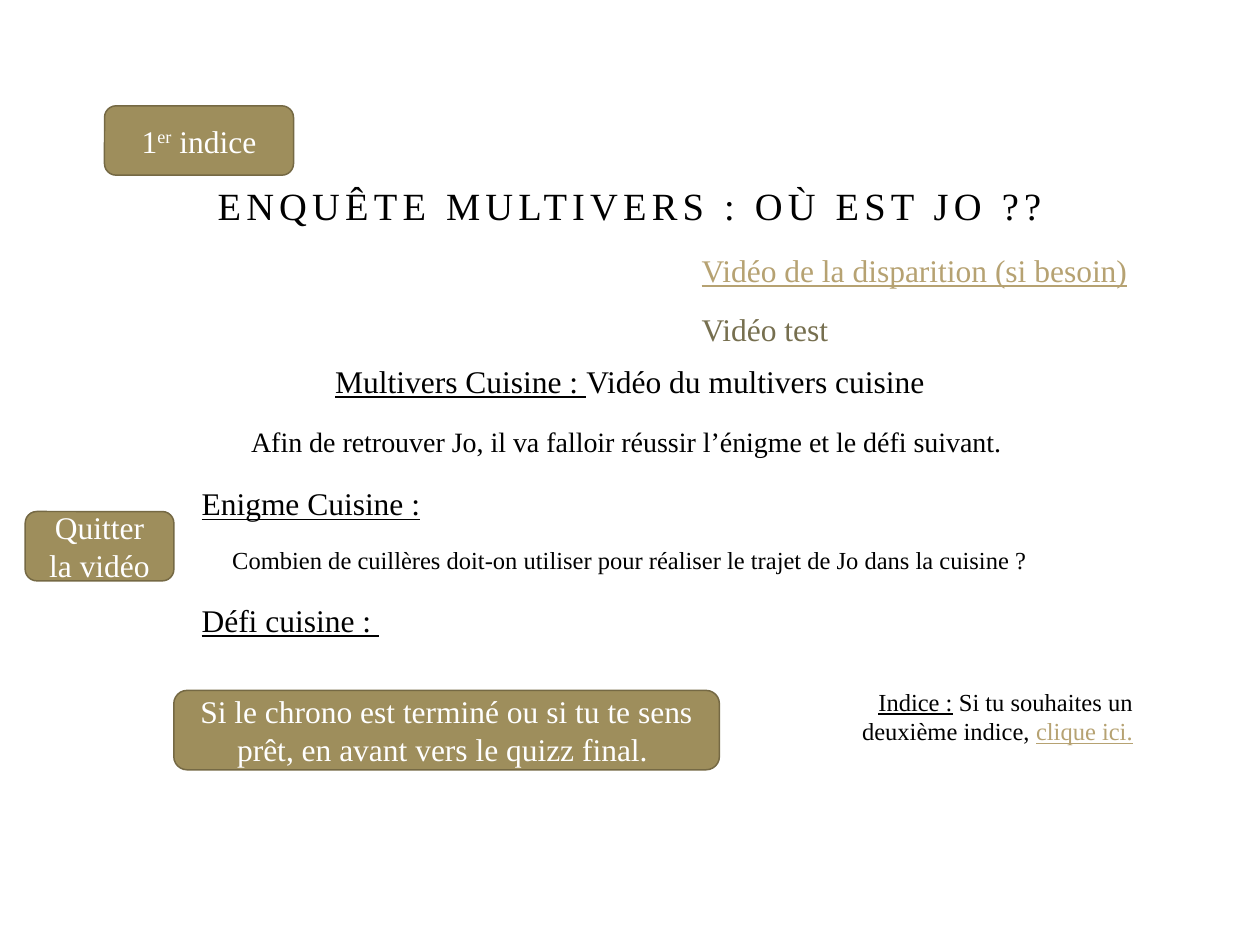
from pptx import Presentation
from pptx.dml.color import RGBColor
from pptx.enum.shapes import MSO_SHAPE
from pptx.enum.text import MSO_ANCHOR, MSO_AUTO_SIZE, PP_ALIGN
from pptx.oxml.xmlchemy import OxmlElement
from pptx.util import Inches, Pt

FONT = "Times New Roman"
BLACK = RGBColor(0x00, 0x00, 0x00)
WHITE = RGBColor(0xFF, 0xFF, 0xFF)
GOLD = RGBColor(0x9E, 0x8E, 0x5C)
GOLD_EDGE = RGBColor(0x75, 0x69, 0x44)
LINK = RGBColor(0xB6, 0xA2, 0x72)
VISITED_LINK = RGBColor(0x76, 0x6F, 0x4F)


def add_text(paragraph, text, size=18, color=BLACK, underline=False,
             spacing=None, baseline=None):
    """Append a run; spacing is in points, baseline in percent."""
    run = paragraph.add_run()
    run.text = text
    run.font.name = FONT
    run.font.size = Pt(size)
    run.font.bold = False
    run.font.underline = underline
    run.font.color.rgb = color
    properties = run._r.get_or_add_rPr()
    if spacing is not None:
        properties.set("spc", str(spacing * 100))
    if baseline is not None:
        properties.set("baseline", str(baseline * 1000))


def place(part, box):
    part.left, part.top, part.width, part.height = map(Inches, box)


def remove_bullet(paragraph):
    properties = paragraph._p.get_or_add_pPr()
    properties.set("marL", "0")
    properties.set("indent", "0")
    properties.append(OxmlElement("a:buNone"))


def fill_title(title, box):
    place(title, box)
    frame = title.text_frame
    frame.auto_size = MSO_AUTO_SIZE.NONE
    frame.vertical_anchor = MSO_ANCHOR.BOTTOM
    heading = frame.paragraphs[0]
    heading.alignment = PP_ALIGN.CENTER
    add_text(heading, "ENQUÊTE MULTIVERS : OÙ EST JO ??", size=22, spacing=3)


def fill_instructions(body, box):
    place(body, box)
    frame = body.text_frame
    frame.auto_size = MSO_AUTO_SIZE.NONE
    frame.vertical_anchor = MSO_ANCHOR.TOP
    center, left = PP_ALIGN.CENTER, PP_ALIGN.LEFT
    steps = [
        (center, [("Multivers Cuisine : ", 18, True),
                  ("Vidéo du multivers cuisine", 18, False)]),
        (center, [("Afin de retrouver Jo, il va falloir réussir l’énigme "
                   "et le défi suivant. ", 16, False)]),
        (left, [("Enigme Cuisine :", 18, True)]),
        (center, [("Combien de cuillères doit-on utiliser pour réaliser le "
                   "trajet de Jo dans la cuisine ?", 14, False)]),
        (left, [("Défi cuisine : ", 18, True)]),
    ]
    for index, (alignment, runs) in enumerate(steps):
        step = frame.add_paragraph() if index else frame.paragraphs[0]
        remove_bullet(step)
        step.alignment = alignment
        step.line_spacing = 1.5
        step.space_before = Pt(4.5 if index else 0)
        for text, size, underline in runs:
            add_text(step, text, size=size, underline=underline)


def add_note(slide, box, runs, alignment=PP_ALIGN.LEFT):
    note = slide.shapes.add_textbox(*map(Inches, box))
    note.text_frame.word_wrap = True
    paragraph = note.text_frame.paragraphs[0]
    paragraph.alignment = alignment
    for text, text_format in runs:
        add_text(paragraph, text, **text_format)


def add_button(slide, box, runs):
    button = slide.shapes.add_shape(MSO_SHAPE.ROUNDED_RECTANGLE,
                                    *map(Inches, box))
    button.shadow.inherit = False
    button.fill.solid()
    button.fill.fore_color.rgb = GOLD
    button.line.color.rgb = GOLD_EDGE
    button.line.width = Pt(0.85)
    frame = button.text_frame
    frame.word_wrap = True
    frame.vertical_anchor = MSO_ANCHOR.MIDDLE
    label = frame.paragraphs[0]
    label.alignment = PP_ALIGN.CENTER
    for text, text_format in runs:
        add_text(label, text, color=WHITE, **text_format)


def main():
    deck = Presentation()
    deck.slide_width, deck.slide_height = Inches(10), Inches(7.5)
    slide = deck.slides.add_slide(deck.slide_layouts[1])

    fill_title(slide.shapes.title, (1.5, 1.39, 7, 0.47))
    fill_instructions(slide.placeholders[1], (1.5, 2.67, 7, 3.33))

    add_note(slide, (5.47, 1.94, 3.94, 0.71),
             [("Vidéo de la disparition (si besoin)",
               {"color": LINK, "underline": True})])
    add_note(slide, (6.73, 5.4, 2.36, 0.57),
             [("Indice :", {"size": 14, "underline": True}),
              (" Si tu souhaites un deuxième indice, ", {"size": 14}),
              ("clique ici.",
               {"size": 14, "color": LINK, "underline": True})],
             PP_ALIGN.RIGHT)
    add_note(slide, (5.47, 2.41, 2.52, 0.4),
             [("Vidéo test", {"color": VISITED_LINK})])

    add_button(slide, (0.83, 0.84, 1.5, 0.55),
               [("1", {}), ("er", {"baseline": 30}), (" indice", {})])
    add_button(slide, (1.38, 5.48, 4.33, 0.63),
               [("Si le chrono est terminé ou si tu te sens prêt, "
                 "en avant vers le quizz final. ", {})])
    add_button(slide, (0.2, 4.06, 1.18, 0.55), [("Quitter la vidéo", {})])

    deck.save("out.pptx")


if __name__ == "__main__":
    main()
